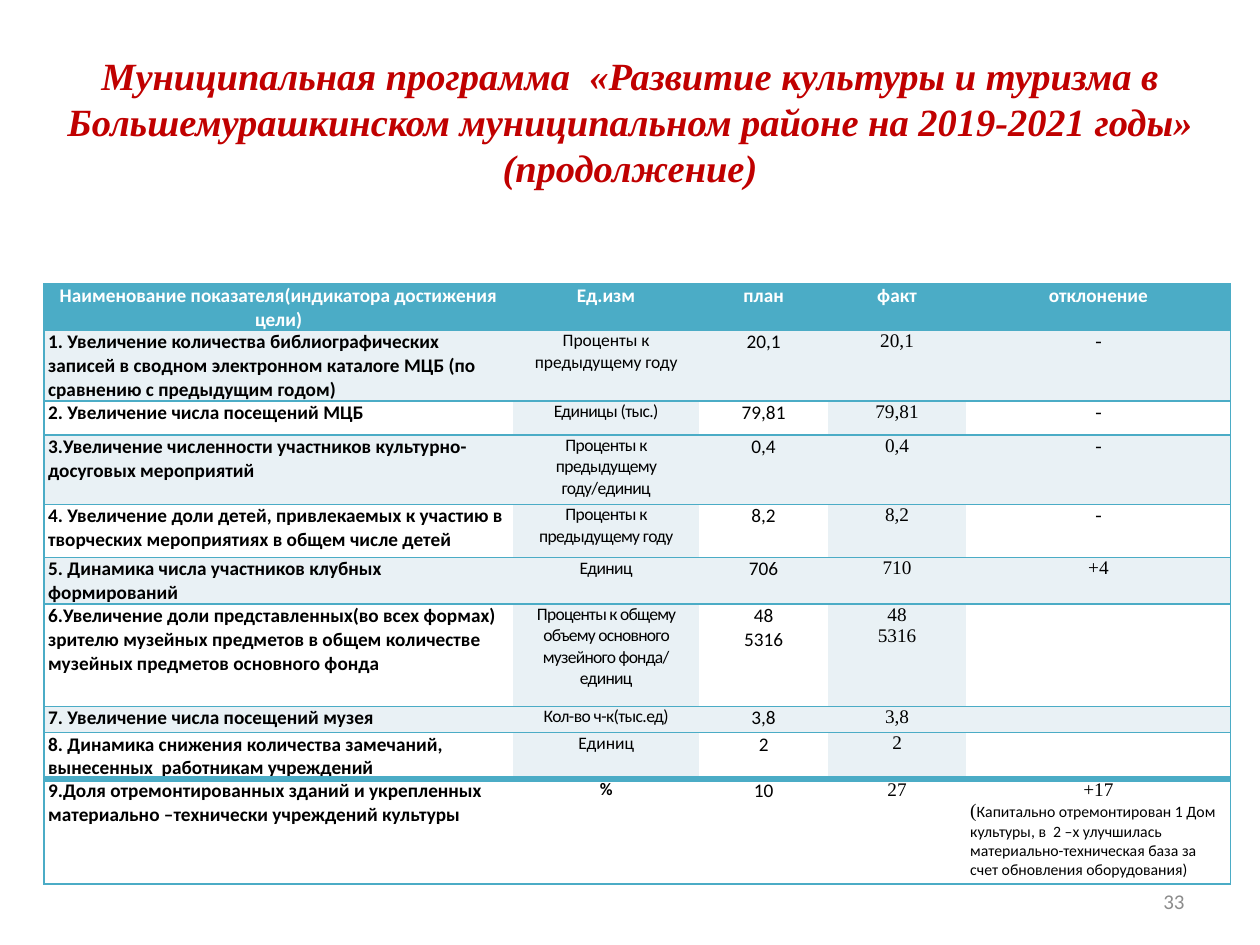
from dataclasses import dataclass

import pptx
import pptx.dml.color
import pptx.enum.text
import pptx.oxml
import pptx.oxml.ns
import pptx.util

Cm = pptx.util.Cm
Pt = pptx.util.Pt
Align = pptx.enum.text.PP_ALIGN
Anchor = pptx.enum.text.MSO_ANCHOR


@dataclass(frozen=True)
class Theme:
    sans: str = "Calibri"
    serif: str = "Times New Roman"
    title: str = "C00000"
    accent: str = "4BACC6"
    tint: str = "E9F1F5"
    white: str = "FFFFFF"
    ink: str = "000000"
    muted: str = "8C8C8C"
    title_size: float = 22
    number_size: float = 12
    body_size: float = 11
    unit_size: float = 10
    note_size: float = 9
    thin: float = 1
    thick: float = 4


HEADINGS = ["Наименование показателя(индикатора достижения цели)",
            "Ед.изм", "план", "факт", "отклонение"]
INDICATORS = [
    ("1. Увеличение количества библиографических записей в сводном электронном каталоге МЦБ "
     "(по сравнению с предыдущим годом)", "Проценты к предыдущему году", "20,1", "20,1", "-"),
    ("2. Увеличение числа посещений МЦБ", "Единицы (тыс.)", "79,81", "79,81", "-"),
    ("3.Увеличение численности участников культурно-досуговых мероприятий",
     "Проценты к предыдущему году/единиц", "0,4", "0,4", "-"),
    ("4. Увеличение доли детей, привлекаемых к участию в творческих мероприятиях "
     "в общем числе детей", "Проценты к предыдущему году", "8,2", "8,2", "-"),
    ("5. Динамика числа участников клубных формирований", "Единиц", "706", "710", "+4"),
    ("6.Увеличение доли представленных(во всех формах) зрителю музейных предметов "
     "в общем количестве музейных предметов основного фонда",
     "Проценты к общему объему основного музейного фонда/\nединиц",
     "48\n5316", "48\n5316", ""),
    ("7. Увеличение числа посещений музея", "Кол-во ч-к(тыс.ед)", "3,8", "3,8", ""),
    ("8. Динамика снижения количества замечаний, вынесенных  работникам учреждений",
     "Единиц", "2", "2", ""),
    ("9.Доля отремонтированных зданий и укрепленных материально –технически "
     "учреждений культуры", "%", "10", "27", "+17"),
]
UNIT_TRACKING = [0, -30, -30, -30, -30, -40, -30, 0, 0]
DEVIATION_NOTE = ("Капитально отремонтирован 1 Дом культуры, в  2 –х улучшилась "
                  "материально-техническая база за счет обновления оборудования)")
COLUMN_WIDTHS = [9.45, 3.76, 2.59, 2.79, 5.33]
ROW_HEIGHTS = [0.94, 1.42, 0.69, 1.4, 1.07, 0.94, 2.06, 0.53, 0.94, 2.11]
PLAIN_TABLE_STYLE = "{2D5ABB26-0587-4C30-8999-92F81FD0307C}"


class SlideBuilder:
    """Holds the theme and the current slide and adds each kind of element."""

    def __init__(self, slide, theme):
        self.slide = slide
        self.theme = theme

    def style(self, font, size, color, face=None, bold=False, italic=False, tracking=0):
        font.name = face or self.theme.sans
        font.size = Pt(size)
        font.bold = bold
        font.italic = italic
        font.color.rgb = pptx.dml.color.RGBColor.from_string(color)
        if tracking:
            font._rPr.set("spc", str(tracking))

    def fill_text(self, frame, text, align, size, color, **look):
        frame.text = text
        for paragraph in frame.paragraphs:
            paragraph.alignment = align
            self.style(paragraph.font, size, color, **look)
            if not text:
                paragraph._p.get_or_add_endParaRPr().set("sz", str(int(size * 100)))

    def place(self, shape, left, top, width, height):
        shape.left, shape.top = Cm(left), Cm(top)
        shape.width, shape.height = Cm(width), Cm(height)

    def title(self, text, *box):
        heading = self.slide.shapes.title
        self.place(heading, *box)
        frame = heading.text_frame
        frame.auto_size = pptx.enum.text.MSO_AUTO_SIZE.NONE
        frame.vertical_anchor = Anchor.TOP
        self.fill_text(frame, text, Align.CENTER, self.theme.title_size, self.theme.title,
                       face=self.theme.serif, bold=True, italic=True)

    def page_number(self, text, *box):
        frame = self.slide.shapes.add_textbox(*map(Cm, box)).text_frame
        frame.word_wrap = True
        frame.vertical_anchor = Anchor.MIDDLE
        self.fill_text(frame, text, Align.RIGHT, self.theme.number_size, self.theme.muted)

    def table(self, left, top, widths, heights):
        table = self.slide.shapes.add_table(
            len(heights), len(widths), Cm(left), Cm(top),
            Cm(sum(widths)), Cm(sum(heights))).table
        table.first_row = table.horz_banding = False
        table._tbl.tblPr.find(pptx.oxml.ns.qn("a:tableStyleId")).text = PLAIN_TABLE_STYLE
        for column, width in zip(table.columns, widths):
            column.width = Cm(width)
        for row, height in zip(table.rows, heights):
            row.height = Cm(height)
        return table

    def cell(self, cell, fill, borders):
        cell.margin_left = cell.margin_right = Cm(0.08)
        cell.margin_top = cell.margin_bottom = 0
        properties = cell._tc.get_or_add_tcPr()
        for side, width in borders.items():
            properties.append(pptx.oxml.parse_xml(
                f'<a:ln{side} {pptx.oxml.ns.nsdecls("a")} w="{Pt(width)}"><a:solidFill>'
                f'<a:srgbClr val="{self.theme.accent}"/></a:solidFill></a:ln{side}>'))
        cell.fill.solid()
        cell.fill.fore_color.rgb = pptx.dml.color.RGBColor.from_string(fill)

    def note(self, frame, text):
        paragraph = frame.add_paragraph()
        paragraph.alignment = Align.LEFT
        for part, face, size in (("(", self.theme.serif, self.theme.body_size),
                                 (text, self.theme.sans, self.theme.note_size)):
            run = paragraph.add_run()
            run.text = part
            self.style(run.font, size, self.theme.ink, face=face)

    def indicators(self, left, top):
        theme = self.theme
        table = self.table(left, top, COLUMN_WIDTHS, ROW_HEIGHTS)
        last_row, last_column = len(ROW_HEIGHTS) - 1, len(COLUMN_WIDTHS) - 1
        for r, values in enumerate([HEADINGS, *INDICATORS]):
            for c, value in enumerate(values):
                borders = {}
                if c == 0:
                    borders["L"] = theme.thin
                if c == last_column:
                    borders["R"] = theme.thin
                borders["T"] = theme.thick if r == last_row else theme.thin
                borders["B"] = theme.thick if r == last_row - 1 else theme.thin
                tinted = r < last_row and (r % 2 or c in (1, 3))
                fill = theme.accent if r == 0 else theme.tint if tinted else theme.white
                cell = table.cell(r, c)
                self.cell(cell, fill, borders)
                unit = r > 0 and c == 1
                self.fill_text(
                    cell.text_frame, value,
                    Align.LEFT if r and c == 0 else Align.CENTER,
                    theme.unit_size if unit else theme.body_size,
                    theme.ink if r else theme.white,
                    face=theme.serif if r and c >= 3 else theme.sans,
                    bold=r == 0 or c == 0 or value == "%",
                    tracking=UNIT_TRACKING[r - 1] if unit else 0)
                if r == 0:
                    cell.text_frame.paragraphs[0].space_after = Pt(3)
        self.note(table.cell(last_row, last_column).text_frame, DEVIATION_NOTE)


def main():
    presentation = pptx.Presentation()
    presentation.slide_width, presentation.slide_height = Cm(25.4), Cm(19.05)
    slide = presentation.slides.add_slide(presentation.slide_layouts.get_by_name("Title Only"))
    builder = SlideBuilder(slide, Theme())
    builder.page_number("33", 18.2, 17.66, 5.93, 1.01)
    builder.indicators(0.89, 5.72)
    builder.title("Муниципальная программа  «Развитие культуры и туризма в Большемурашкинском "
                  "муниципальном районе на 2019-2021 годы»\n(продолжение)",
                  0.3, 0.92, 24.8, 3.07)
    presentation.save("out.pptx")


if __name__ == "__main__":
    main()
